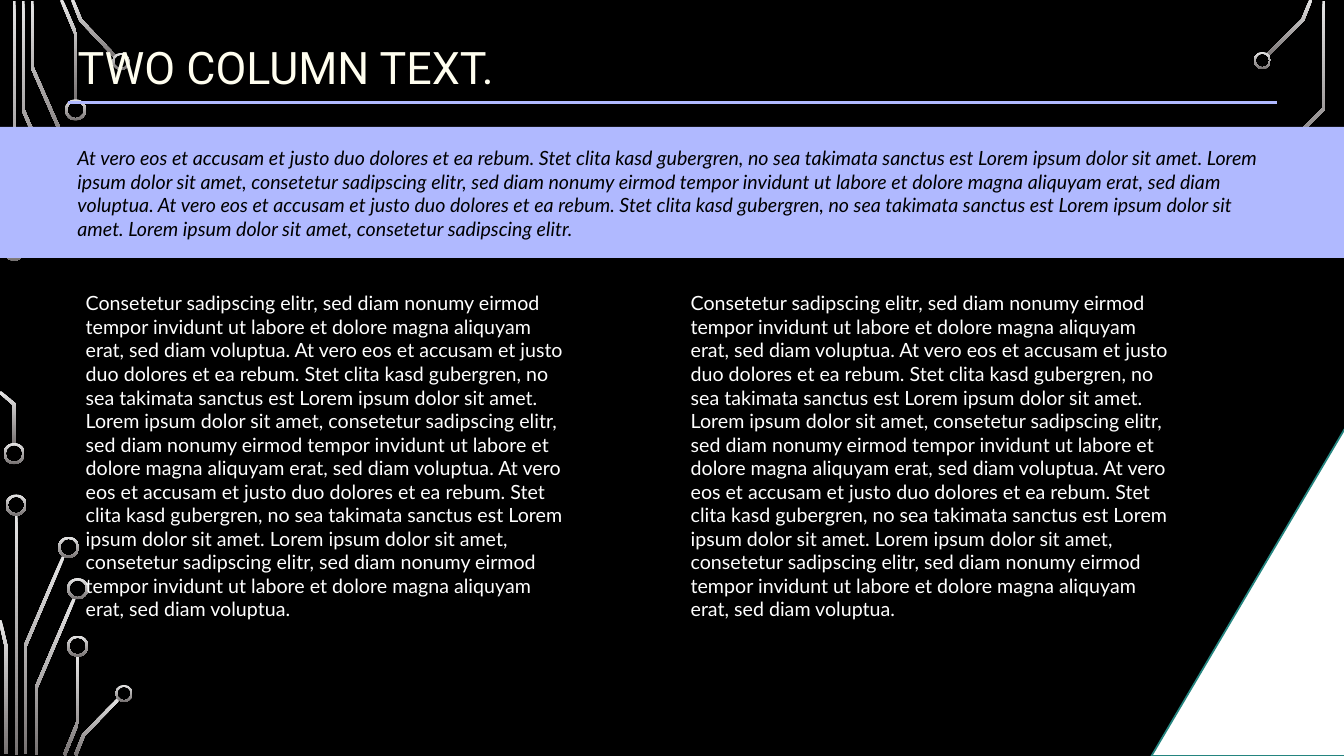
from math import hypot

from lxml.etree import SubElement
from pptx import Presentation
from pptx.dml.color import RGBColor
from pptx.enum.shapes import MSO_CONNECTOR as Link, MSO_SHAPE as Form
from pptx.enum.text import MSO_ANCHOR as Anchor, MSO_AUTO_SIZE as Fit, PP_ALIGN as Align
from pptx.oxml.ns import qn
from pptx.util import Inches, Pt

TITLE = "TWO COLUMN TEXT."
REST = " sadipscing elitr, sed diam nonumy eirmod tempor invidunt ut labore et dolore magna aliquyam erat, sed diam voluptua."
VERO = "At vero eos et accusam et justo duo dolores et ea rebum."
STET = "Stet clita kasd gubergren, no sea takimata sanctus est Lorem ipsum dolor sit amet."
LEAD = "Lorem ipsum dolor sit amet, consetetur"
LOREM = LEAD + REST
INTRO = " ".join([VERO, STET, LOREM, VERO, STET, LEAD + " sadipscing elitr."])
COLUMN = " ".join(["Consetetur" + REST, VERO, STET, LOREM, VERO, STET, LOREM])

BLACK, WHITE, LILAC, CREAM, TEAL = "000000", "FFFFFF", "B0B9FF", "FFFEEF", "24847F"
SILVER = ("E7E6E6", "767171")
WIDE, HIGH = 13.33, 7.5
EDGE, SPAN = 0.67, 12
COL_X, COL_STEP = 0.75, 6

# Centre lines of the circuit traces, in inches
TRACE_W = 0.03
TRACES = [
    [(0.14, 0.01), (0.14, 2.39)],
    [(0.23, 0.01), (0.23, 1.09), (0.61, 1.98)],
    [(0.32, 0.01), (0.32, 0.67), (0.71, 1.56)],
    [(0.61, 0), (0.75, 0.33), (0.75, 1)],
    [(0.72, 0), (0.8, 0.2), (1.15, 0.57)],
    [(0, 3.89), (0.14, 4.01), (0.14, 4.41)],
    [(0.16, 5.1), (0.16, 7.49)],
    [(0.25, 7.48), (0.25, 6.41), (0.63, 5.52)],
    [(0, 6.15), (0.06, 6.41), (0.06, 7.48)],
    [(0.36, 7.49), (0.36, 6.82), (0.74, 5.93)],
    [(0.64, 7.49), (0.77, 7.17), (0.77, 6.5)],
    [(0.75, 7.49), (0.83, 7.29), (1.18, 6.93)],
    [(13, 0), (12.92, 0.2), (12.57, 0.55)],
    [(13.13, 0.01), (13.13, 1.08), (12.82, 1.39), (12.82, 1.69)],
]
# Pads at the trace ends: centre x, centre y, diameter
PADS = [
    (0.14, 2.48, 0.21), (0.14, 4.5, 0.21), (0.75, 1.09, 0.21), (1.2, 0.61, 0.17),
    (0.16, 5.01, 0.21), (0.68, 5.43, 0.21), (0.77, 5.84, 0.21), (0.77, 6.41, 0.21),
    (1.23, 6.88, 0.17), (12.52, 0.6, 0.17),
]


def color(code):
    return RGBColor.from_string(code)


def box(*sides):
    return [Inches(side) for side in sides]


def place(shape, *sides):
    shape.left, shape.top, shape.width, shape.height = box(*sides)


def plain(shape, code):
    shape.shadow.inherit = False
    shape.fill.solid()
    shape.fill.fore_color.rgb = color(code)
    shape.line.fill.background()


def metal(shape):
    """Fill with the silver gradient, light at the top."""
    shape.shadow.inherit = False
    shape.line.fill.background()
    shape.fill.gradient()
    shape.fill.gradient_angle = 270
    for stop, code in zip(shape.fill.gradient_stops, SILVER):
        stop.color.rgb = color(code)


def side(points, gap):
    """Shift a polyline sideways by gap, with mitred corners."""
    norms = []
    for (x, y), (u, v) in zip(points, points[1:]):
        size = hypot(u - x, v - y)
        norms.append(((y - v) / size, (u - x) / size))
    moved = []
    for (x, y), (a, b), (c, d) in zip(points, norms[:1] + norms, norms + norms[-1:]):
        reach = gap / (1 + a * c + b * d)
        moved.append((x + (a + c) * reach, y + (b + d) * reach))
    return moved


def write(shape, text, font, size, code, fit=Fit.SHAPE_TO_FIT_TEXT, anchor=Anchor.TOP, italic=None):
    frame = shape.text_frame
    frame.text = text
    frame.word_wrap = True
    frame.auto_size = fit
    frame.vertical_anchor = anchor
    para = frame.paragraphs[0]
    para.alignment = Align.LEFT
    para.space_before = Pt(0)
    face = para.runs[0].font
    face.name, face.size, face.italic = font, Pt(size), italic
    face.color.rgb = color(code)
    return para


deck = Presentation()
deck.slide_width, deck.slide_height = box(WIDE, HIGH)
slide = deck.slides.add_slide(deck.slide_layouts.get_by_name("Two Content"))
shapes = slide.shapes
slide.background.fill.solid()
slide.background.fill.fore_color.rgb = color(BLACK)
title, *columns = list(slide.placeholders)[:3]
for extra in list(slide.placeholders)[3:]:
    shapes.element.remove(extra.element)

for points in TRACES:
    ring = side(points, TRACE_W / 2) + side(points, -TRACE_W / 2)[::-1]
    ring = [box(*point) for point in ring]
    pen = shapes.build_freeform(*ring[0], scale=1.0)
    pen.add_line_segments(ring[1:], close=True)
    metal(pen.convert_to_shape())
for x, y, size in PADS:
    pad = shapes.add_shape(Form.DONUT, *box(x - size / 2, y - size / 2, size, size))
    pad.adjustments[0] = 0.1
    metal(pad)

corner = shapes.add_shape(Form.RIGHT_TRIANGLE, *box(11.42, 4.25, 1.92, 3.25))
plain(corner, WHITE)
corner.line.color.rgb = color(TEAL)
corner.line.width = Pt(1.25)
corner.element.spPr.find(qn("a:xfrm")).set("flipH", "1")

# Bring the placeholders in front of the circuit
for holder in (title, *columns):
    shapes.element.append(holder.element)

place(title, EDGE, 0.33, 6.53, 0.73)
write(title, TITLE, "Roboto", 32, CREAM, Fit.NONE, Anchor.MIDDLE).line_spacing = 0.9

rule = shapes.add_connector(Link.STRAIGHT, *box(EDGE, 1.02, EDGE + SPAN, 1.02))
rule.line.color.rgb = color(LILAC)
rule.line.width = Pt(2)
SubElement(rule.element.spPr, qn("a:effectLst"))

for i, column in enumerate(columns):
    place(column, COL_X + i * COL_STEP, 2.84, 5, 3.4)
    para = write(column, COLUMN, "Lato", 14, WHITE)
    props = para._p.get_or_add_pPr()
    props.set("marL", "0")
    props.set("indent", "0")
    SubElement(props, qn("a:buNone"))

band = shapes.add_shape(Form.RECTANGLE, *box(0, 1.26, WIDE, 1.3))
plain(band, LILAC)
intro = shapes.add_shape(Form.RECTANGLE, *box(EDGE, 1.4, SPAN, 1.04))
plain(intro, LILAC)
write(intro, INTRO, "Lato", 14, BLACK, italic=True)

deck.save("out.pptx")
